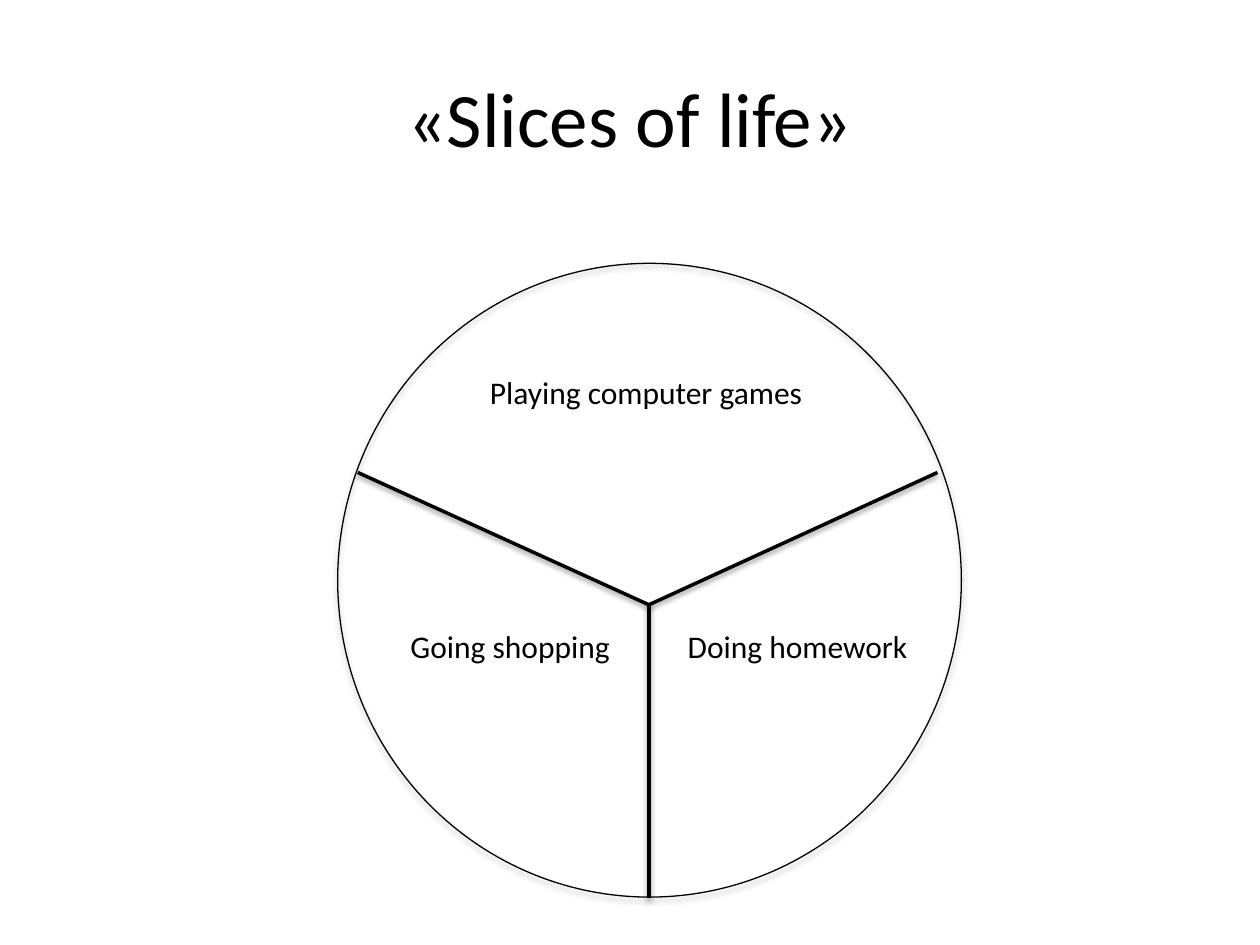
from lxml import etree
from pptx import Presentation
from pptx.dml.color import RGBColor
from pptx.enum.shapes import MSO_CONNECTOR, MSO_SHAPE
from pptx.enum.text import MSO_ANCHOR, MSO_AUTO_SIZE, PP_ALIGN
from pptx.oxml.ns import nsdecls
from pptx.util import Pt

PX = 9144  # EMU per px, 100 px to the inch
BLACK = RGBColor(0, 0, 0)
FONT = "Calibri"
OVAL = MSO_SHAPE.OVAL
STRAIGHT = MSO_CONNECTOR.STRAIGHT
CENTER = PP_ALIGN.CENTER
MIDDLE = MSO_ANCHOR.MIDDLE
FIT_SHAPE = MSO_AUTO_SIZE.SHAPE_TO_FIT_TEXT


def emu(*lengths):
    return [n * PX for n in lengths]


class Slide:
    """Holds the current slide and its black-on-white style."""

    def __init__(self, prs):
        self.s = prs.slides.add_slide(prs.slide_layouts[5])

    def style_text(self, tf, text, size):
        tf.text = text
        font = tf.paragraphs[0].runs[0].font
        font.name, font.size = FONT, Pt(size)
        font.color.rgb = BLACK

    def style_line(self, sp, width, distance, opacity):
        """Draw a black outline with a soft shadow straight below it."""
        sp.line.color.rgb = BLACK
        sp.line.width = Pt(width)
        sp._element.spPr.append(etree.fromstring(
            f'<a:effectLst {nsdecls("a")}>'
            f'<a:outerShdw blurRad="{Pt(3.1)}" dist="{Pt(distance)}" '
            'dir="5400000" rotWithShape="0"><a:srgbClr val="000000">'
            f'<a:alpha val="{opacity * 1000}"/></a:srgbClr>'
            '</a:outerShdw></a:effectLst>'))

    def title(self, text, *box):
        sp = self.s.shapes.title
        sp.left, sp.top, sp.width, sp.height = emu(*box)
        tf = sp.text_frame
        self.style_text(tf, text, 44)
        tf.vertical_anchor = MIDDLE
        tf.paragraphs[0].alignment = CENTER

    def circle(self, *box):
        sp = self.s.shapes.add_shape(OVAL, *emu(*box))
        sp.fill.background()
        self.style_line(sp, 0.75, 1.8, 35)

    def divider(self, start, end):
        sp = self.s.shapes.add_connector(STRAIGHT, *emu(*start, *end))
        self.style_line(sp, 2, 1.6, 38)

    def label(self, text, *box):
        tf = self.s.shapes.add_textbox(*emu(*box)).text_frame
        tf.word_wrap = False
        tf.auto_size = FIT_SHAPE
        self.style_text(tf, text, 18)


def main():
    prs = Presentation()
    prs.slide_width, prs.slide_height = emu(1000, 750)
    slide = Slide(prs)
    slide.title("«Slices of life»", 50, 30, 900, 125)
    slide.circle(268, 209, 495, 503)
    hub = (515, 480)
    for rim in ((284, 375), (515, 713), (744, 375)):
        slide.divider(hub, rim)
    for text, left, top, width in (
        ("Playing computer games", 379, 291, 272),
        ("Going shopping", 316, 493, 180),
        ("Doing homework", 536, 493, 197),
    ):
        slide.label(text, left, top, width, 40)
    prs.save("out.pptx")


if __name__ == "__main__":
    main()
